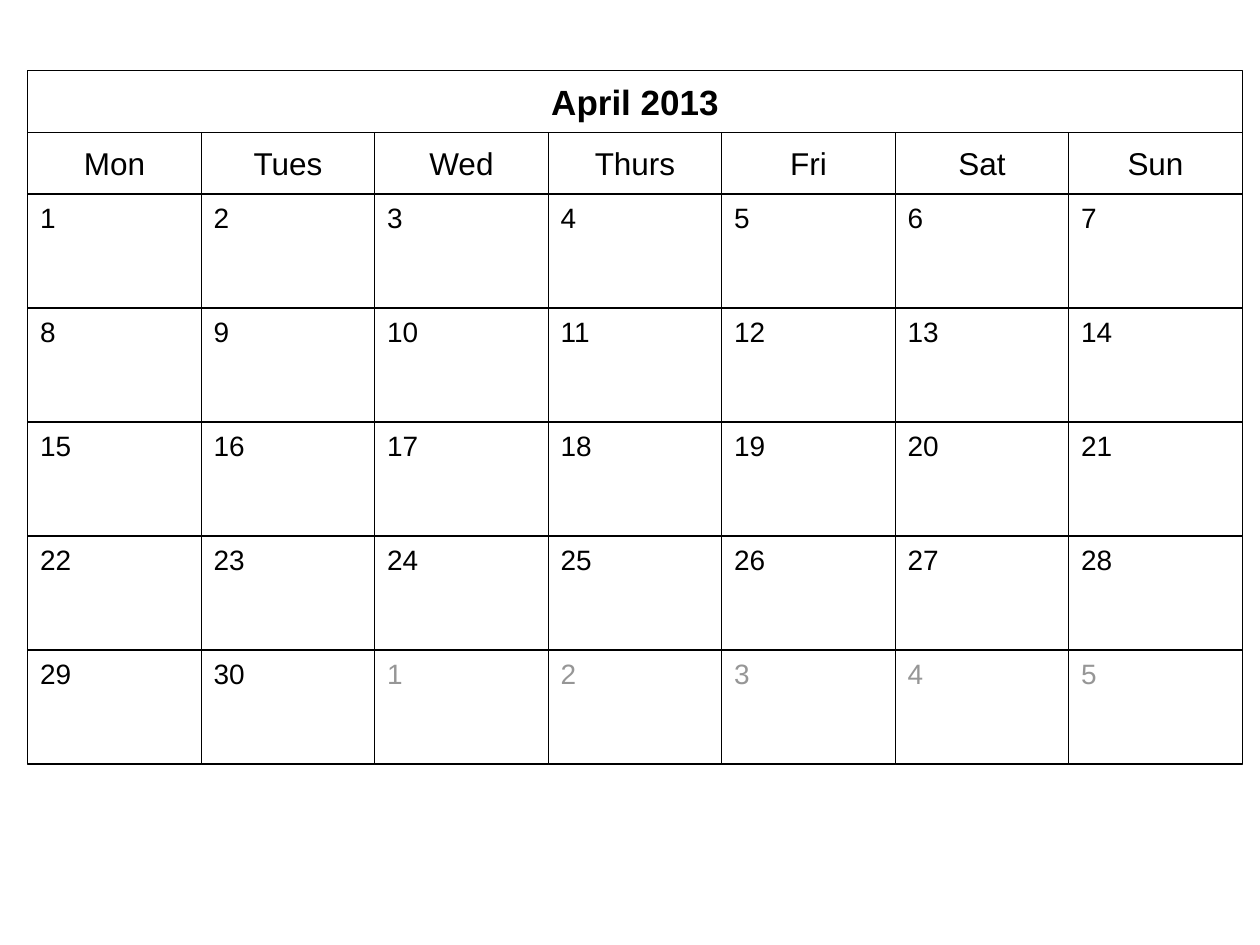
from dataclasses import dataclass

from pptx import Presentation
from pptx.dml.color import RGBColor
from pptx.enum.shapes import MSO_SHAPE
from pptx.enum.text import MSO_ANCHOR, PP_ALIGN
from pptx.util import Inches, Pt

LEFT, TOP, WIDTH = 0.22, 0.56, 9.64
HEAD, WEEK = 0.49, 0.905
DAYS = ["Mon", "Tues", "Wed", "Thurs", "Fri", "Sat", "Sun"]
COL = WIDTH / len(DAYS)
WEEKS, LAST = 5, 30
BLACK, WHITE, GREY = "000000", "FFFFFF", "969696"


@dataclass
class Box:
    x: float
    y: float
    w: float
    h: float


def paint(target, color: str) -> None:
    target.rgb = RGBColor.from_string(color)


def write(frame, text: str, *, size: int = 16, color: str = BLACK,
          bold: bool = False, head: bool = False) -> None:
    frame.word_wrap = True
    frame.vertical_anchor = MSO_ANCHOR.MIDDLE if head else MSO_ANCHOR.TOP
    frame.margin_left = frame.margin_right = Inches(0.1)
    frame.margin_top = frame.margin_bottom = Inches(0.02 if head else 0.05)
    line = frame.paragraphs[0]
    line.alignment = PP_ALIGN.CENTER if head else PP_ALIGN.LEFT
    run = line.add_run()
    run.text = text
    run.font.name = "Arial"
    run.font.size = Pt(size)
    run.font.bold = bold
    paint(run.font.color, color)


def draw(slide, box: Box, text: str, **style) -> None:
    shape = slide.shapes.add_shape(
        MSO_SHAPE.RECTANGLE,
        Inches(box.x), Inches(box.y), Inches(box.w), Inches(box.h))
    shape.shadow.inherit = False
    shape.fill.solid()
    paint(shape.fill.fore_color, WHITE)
    paint(shape.line.color, BLACK)
    shape.line.width = Pt(0.75)
    write(shape.text_frame, text, **style)


def main() -> None:
    deck = Presentation()
    deck.slide_width, deck.slide_height = Inches(10), Inches(7.5)
    slide = deck.slides.add_slide(deck.slide_layouts[6])

    draw(slide, Box(LEFT, TOP, WIDTH, HEAD), "April 2013",
         size=20, bold=True, head=True)
    for col, day in enumerate(DAYS):
        draw(slide, Box(LEFT + col * COL, TOP + HEAD, COL, HEAD), day,
             size=18, head=True)

    start = TOP + 2 * HEAD
    for cell in range(WEEKS * len(DAYS)):
        row, col = divmod(cell, len(DAYS))
        box = Box(LEFT + col * COL, start + row * WEEK, COL, WEEK)
        draw(slide, box, str(cell % LAST + 1),
             color=BLACK if cell < LAST else GREY)

    deck.save("out.pptx")


if __name__ == "__main__":
    main()
